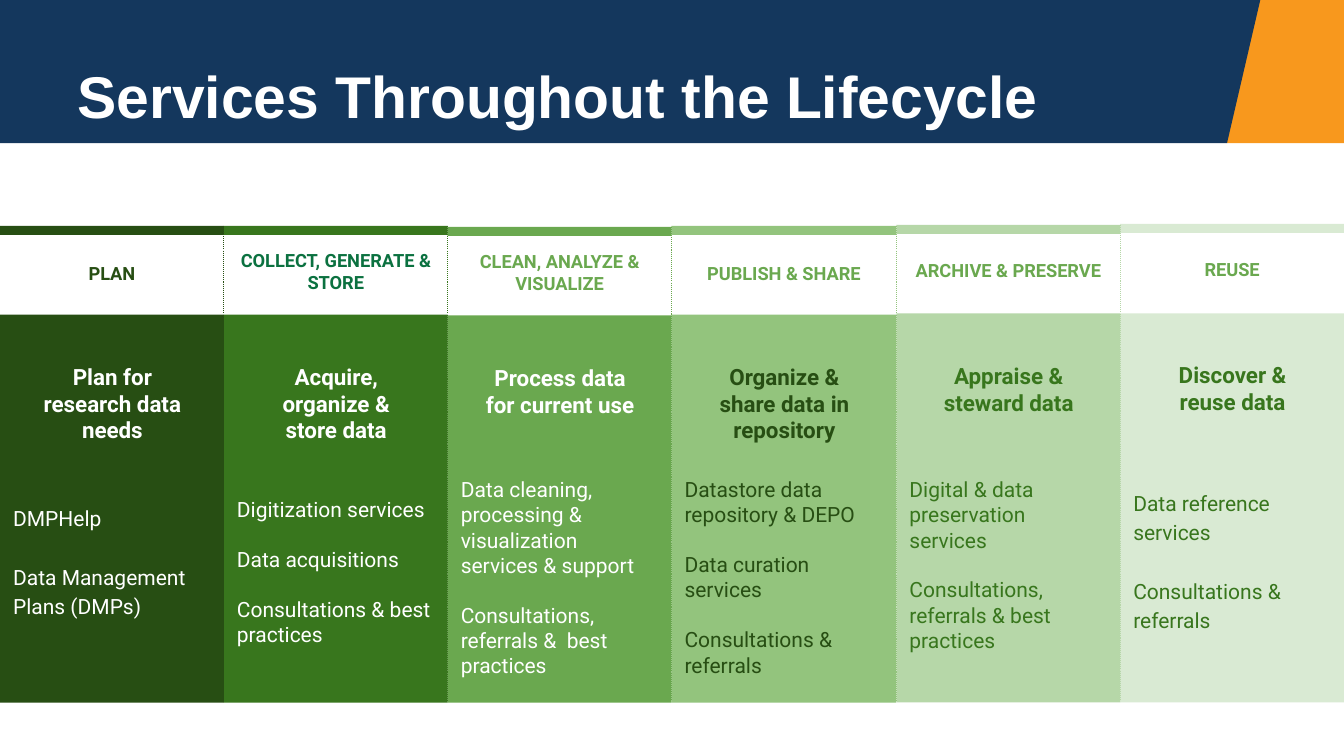
import pptx
import pptx.util
import pptx.dml.color
import pptx.enum.dml
import pptx.enum.shapes
import pptx.enum.text
import pptx.oxml.ns
import lxml.etree

SCALE = 9144
WIDTH, HEIGHT = 1333, 750
HEADER_HEIGHT = 142
STAGE_BOTTOM = 697
COLORS = {
    "navy": "14375D", "orange": "F8981D", "white": "FFFFFF", "teal": "0B7140",
    "forest": "274E13", "green": "38761D", "leaf": "6AA84F",
    "sage": "93C47D", "mint": "B6D7A8", "pale": "D9EAD3",
}
LABEL = {"size": 13, "bold": True, "align": "CENTER", "anchor": "MIDDLE"}
HEADING = {"size": 16, "bold": True, "align": "CENTER"}
SERVICES = {"size": 15, "inset": (13, 13)}
TITLE = {"size": 42, "bold": True, "font": "Arial", "color": "white",
         "anchor": "MIDDLE", "inset": (10, 5)}
TIGHT = {"spacing": 1.0, "gap": 17.6}
LOOSE = {"spacing": 1.15, "gap": 21.3}
STAGES = [
    {"top": 224, "body": 312, "fill": "forest", "ink": "white", "label_color": "forest",
     "label": "PLAN", "label_spacing": 1.15, "heading": "Plan for research data needs",
     "services_top": 485, "rhythm": LOOSE,
     "services": ["DMPHelp", "Data Management Plans (DMPs)"]},
    {"top": 224, "body": 312, "fill": "green", "ink": "white", "label_color": "teal",
     "label": "COLLECT, GENERATE & STORE", "heading": "Acquire, organize & store data",
     "services_top": 480, "rhythm": TIGHT,
     "services": ["Digitization services", "Data acquisitions",
                  "Consultations & best practices"]},
    {"top": 225, "body": 313, "fill": "leaf", "ink": "white", "label_color": "leaf",
     "label": "CLEAN, ANALYZE & VISUALIZE", "heading": "Process data for current use",
     "services_top": 460, "rhythm": TIGHT,
     "services": ["Data cleaning, processing & visualization services & support",
                  "Consultations, referrals &  best practices"]},
    {"top": 224, "body": 312, "fill": "sage", "ink": "forest", "label_color": "leaf",
     "label": "PUBLISH & SHARE", "label_spacing": 1.15,
     "heading": "Organize & share data in repository",
     "services_top": 460, "rhythm": TIGHT,
     "services": ["Datastore data repository & DEPO", "Data curation services",
                  "Consultations & referrals"]},
    {"top": 223, "body": 311, "fill": "mint", "ink": "green", "label_color": "leaf",
     "label": "ARCHIVE & PRESERVE", "heading": "Appraise & steward data",
     "services_top": 460, "rhythm": TIGHT,
     "services": ["Digital & data preservation services",
                  "Consultations, referrals & best practices"]},
    {"top": 222, "body": 311, "fill": "pale", "ink": "green", "label_color": "leaf",
     "label": "REUSE", "heading": "Discover & reuse data",
     "services_top": 470, "rhythm": LOOSE,
     "services": ["Data reference services", "Consultations & referrals"]},
]


def px(*lengths):
    """Turn pixel lengths into EMU."""
    return [pptx.util.Emu(length * SCALE) for length in lengths]


def rgb(name):
    """Look up a named colour."""
    return pptx.dml.color.RGBColor.from_string(COLORS[name])


def paint(shape, color):
    """Give a shape a flat fill without outline or shadow."""
    shape.shadow.inherit = False
    shape.fill.solid()
    shape.fill.fore_color.rgb = rgb(color)
    shape.line.fill.background()


def add_block(page, box, color):
    """Add a plain rectangle."""
    kind = pptx.enum.shapes.MSO_SHAPE.RECTANGLE
    paint(page.shapes.add_shape(kind, *px(*box)), color)


def add_text(page, box, paragraphs, style):
    """Add a text box whose look comes from a style dict."""
    frame = page.shapes.add_textbox(*px(*box)).text_frame
    across, down = px(*style.get("inset", (10, 10)))
    anchor = getattr(pptx.enum.text.MSO_ANCHOR, style.get("anchor", "TOP"))
    layout = {"word_wrap": True, "vertical_anchor": anchor, "margin_left": across,
              "margin_right": across, "margin_top": down, "margin_bottom": down}
    for name, value in layout.items():
        setattr(frame, name, value)
    for index, text in enumerate(paragraphs):
        para = frame.add_paragraph() if index else frame.paragraphs[0]
        para.alignment = getattr(pptx.enum.text.PP_ALIGN, style.get("align", "LEFT"))
        para.line_spacing = style.get("spacing", 1.0)
        para.space_before = pptx.util.Pt(style["gap"] if index else 0)
        span = para.add_run()
        span.text = text
        font = {"name": style.get("font", "Roboto"), "size": pptx.util.Pt(style["size"]),
                "bold": style.get("bold", False)}
        for name, value in font.items():
            setattr(span.font, name, value)
        span.font.color.rgb = rgb(style["color"])


def add_divider(page, x, top, bottom, color):
    """Add a dotted vertical line."""
    kind = pptx.enum.shapes.MSO_CONNECTOR.STRAIGHT
    divider = page.shapes.add_connector(kind, *px(x, top, x, bottom))
    divider.line.color.rgb = rgb(color)
    divider.line.width = pptx.util.Pt(0.75)
    divider.line.dash_style = pptx.enum.dml.MSO_LINE.ROUND_DOT
    properties = divider._element.spPr
    lxml.etree.SubElement(properties, pptx.oxml.ns.qn("a:effectLst"))


def add_header(page, box):
    """Draw the title band with its slanted accent."""
    left, top, width, height = box
    accent = left + width - 116
    add_block(page, (left, top, accent - left, height), "navy")
    add_block(page, (accent, top, 116, height), "orange")
    outline = page.shapes.build_freeform(accent, top, scale=SCALE)
    outline.add_line_segments([(accent + 33, top), (accent, top + height)])
    paint(outline.convert_to_shape(), "navy")
    add_text(page, (left + 67, top + 36, 1211, 117),
             ["Services Throughout the Lifecycle"], TITLE)


def add_stage(page, box, stage, divided):
    """Draw one lifecycle column inside its box."""
    left, top, width, height = box
    bottom = top + height
    add_block(page, (left, stage["body"], width, bottom - stage["body"]), stage["fill"])
    add_block(page, (left, top, width, 9), stage["fill"])
    if divided:
        add_divider(page, left + width, top, bottom - 2, stage["fill"])
    add_text(page, (left, top + 24, width, 43), [stage["label"]],
             {**LABEL, "color": stage["label_color"],
              "spacing": stage.get("label_spacing", 1.0)})
    add_text(page, (left + 26, top + 126, width - 51, 113), [stage["heading"]],
             {**HEADING, "color": stage["ink"]})
    services_top = stage["services_top"]
    add_text(page, (left, services_top, width, bottom - 24 - services_top),
             stage["services"], {**SERVICES, **stage["rhythm"], "color": stage["ink"]})


def add_lifecycle(page, left, width):
    """Lay the stages side by side, the last one at the back."""
    count = len(STAGES)
    edges = [left + round(index * width / count) for index in range(count + 1)]
    for index in reversed(range(count)):
        stage = STAGES[index]
        box = (edges[index], stage["top"], edges[index + 1] - edges[index],
               STAGE_BOTTOM - stage["top"])
        add_stage(page, box, stage, index < count - 1)


def main():
    """Build and save the deck."""
    deck = pptx.Presentation()
    deck.slide_width, deck.slide_height = px(WIDTH, HEIGHT)
    page = deck.slides.add_slide(deck.slide_layouts[6])
    add_header(page, (0, 0, WIDTH, HEADER_HEIGHT))
    add_lifecycle(page, 0, WIDTH)
    deck.save("out.pptx")


if __name__ == "__main__":
    main()
